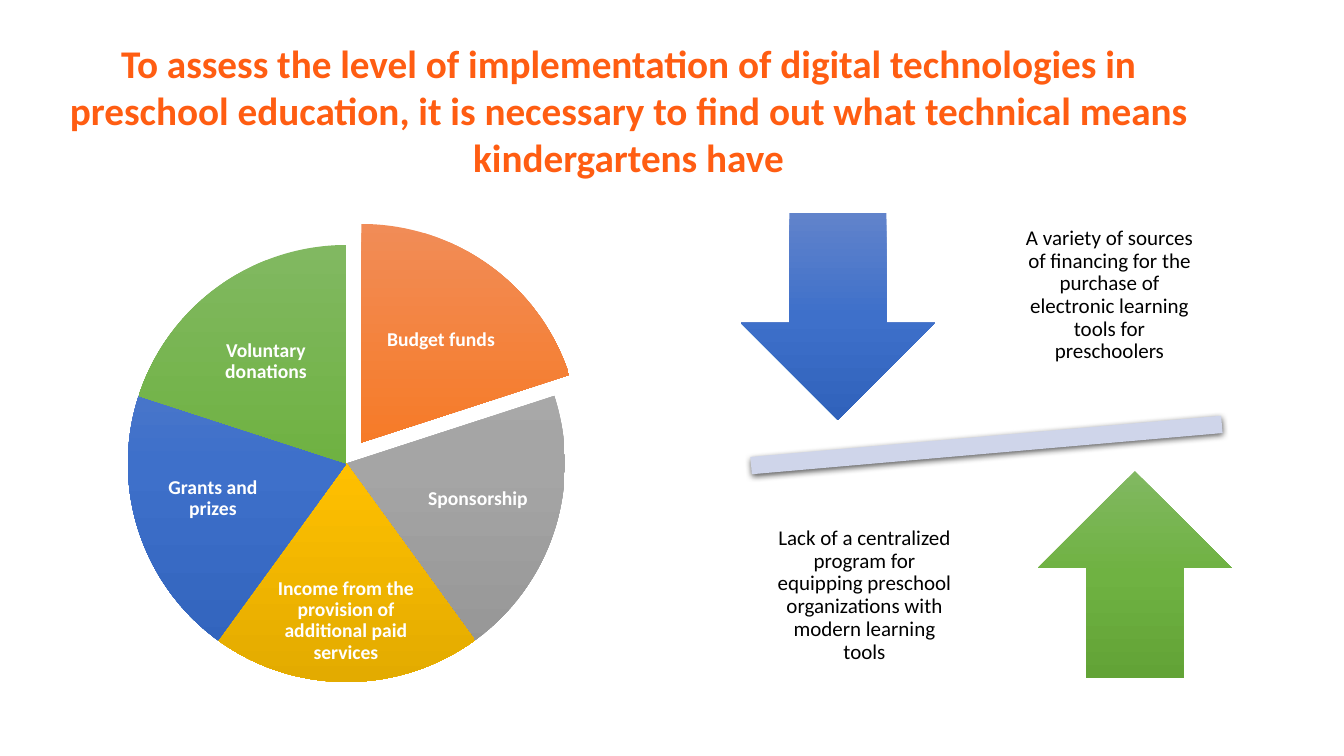
from copy import deepcopy
from typing import NamedTuple

from lxml import etree
from pptx import Presentation
from pptx.dml.color import RGBColor
from pptx.enum.shapes import MSO_SHAPE as Preset
from pptx.enum.text import MSO_ANCHOR as Anchor, MSO_AUTO_SIZE as AutoSize, PP_ALIGN as Align
from pptx.oxml.ns import qn
from pptx.shapes.autoshape import Shape
from pptx.slide import Slide
from pptx.util import Emu, Pt

SLIDE_W, SLIDE_H = 1344, 756
EMU_PER_PX = 12192000 / SLIDE_W
FONT = "Calibri"

COLORS = {"title": "FF5D12", "label": "FFFFFF", "statement": "000000",
          "beam": "CFD5EA", "shadow": "000000"}
GRADIENTS = {
    "orange": ("F18C57", "F67B28", "E56C19"),
    "gray": ("AFAFAF", "A5A5A5", "939393"),
    "gold": ("FFC64B", "FFC000", "E3AB00"),
    "blue": ("6183CB", "3E70CA", "3062BB"),
    "green": ("81B861", "6FB242", "62A336"),
}


class Box(NamedTuple):
    left: int
    top: int
    width: int
    height: int

    def emu(self) -> list[Emu]:
        return [px(length) for length in self]


class Source(NamedTuple):
    label: str
    gradient: str
    label_box: Box
    pie_box: Box


class Argument(NamedTuple):
    statement: str
    gradient: str
    arrow: Preset
    arrow_box: Box
    statement_box: Box


PIE = Box(128, 245, 437, 437)
PULLED_OUT = Box(143, 224, 437, 437)
SOURCES = [
    Source("Budget funds", "orange", Box(367, 289, 148, 102), PULLED_OUT),
    Source("Sponsorship", "gray", Box(413, 444, 130, 110), PIE),
    Source("Income from the provision of additional paid services", "gold",
           Box(268, 574, 156, 94), PIE),
    Source("Grants and prizes", "blue", Box(148, 444, 130, 110), PIE),
    Source("Voluntary donations", "green", Box(192, 311, 148, 102), PIE),
]
ARGUMENTS = [
    Argument("A variety of sources of financing for the purchase of electronic "
             "learning tools for preschoolers", "blue", Preset.DOWN_ARROW,
             Box(741, 213, 194, 207), Box(1006, 187, 207, 217)),
    Argument("Lack of a centralized program for equipping preschool organizations "
             "with modern learning tools", "green", Preset.UP_ARROW,
             Box(1038, 471, 194, 207), Box(761, 487, 207, 217)),
]


def px(length: int) -> Emu:
    return Emu(round(length * EMU_PER_PX))


def add_plain_shape(slide: Slide, preset: Preset, box: Box) -> Shape:
    shape = slide.shapes.add_shape(preset, *box.emu())
    shape.shadow.inherit = False
    shape.line.fill.background()
    return shape


def fill_gradient(shape: Shape, gradient: str) -> None:
    """Three stops running from top to bottom."""
    shape.fill.gradient()
    shape.fill.gradient_angle = 270
    stop_list = shape.element.spPr.find(".//" + qn("a:gsLst"))
    stop_list.append(deepcopy(stop_list[0]))
    for index, (stop, color) in enumerate(zip(shape.fill.gradient_stops, GRADIENTS[gradient])):
        stop.position = index / 2
        stop.color.rgb = RGBColor.from_string(color)


def add_shadow(shape: Shape) -> None:
    effects = shape.element.spPr.find(qn("a:effectLst"))
    shadow = etree.SubElement(effects, qn("a:outerShdw"), blurRad=str(Pt(4.5)),
                              dist=str(Pt(1.5)), dir="5400000", algn="ctr", rotWithShape="0")
    color = etree.SubElement(shadow, qn("a:srgbClr"), val=COLORS["shadow"])
    etree.SubElement(color, qn("a:alpha"), val="63000")


def write_text(shape: Shape, text: str, size: int, color: str, bold: bool) -> None:
    shape.text_frame.word_wrap = True
    paragraph = shape.text_frame.paragraphs[0]
    paragraph.text = text
    paragraph.alignment = Align.CENTER
    paragraph.font.name = FONT
    paragraph.font.size = Pt(size)
    paragraph.font.bold = bold
    paragraph.font.color.rgb = RGBColor.from_string(COLORS[color])


def add_caption(slide: Slide, box: Box, inset: int, text: str, size: int,
                color: str, bold: bool) -> None:
    caption = slide.shapes.add_textbox(*box.emu())
    frame = caption.text_frame
    frame.margin_left = frame.margin_right = px(inset)
    frame.margin_top = frame.margin_bottom = px(inset)
    frame.vertical_anchor = Anchor.MIDDLE
    write_text(caption, text, size, color, bold)
    frame.paragraphs[0].line_spacing = 0.9


def add_title(slide: Slide) -> None:
    title = slide.shapes.title
    title.left, title.top, title.width, title.height = Box(55, 34, 1147, 152).emu()
    title.text_frame.vertical_anchor = Anchor.TOP
    title.text_frame.auto_size = AutoSize.SHAPE_TO_FIT_TEXT
    write_text(title, "To assess the level of implementation of digital technologies in "
               "preschool education, it is necessary to find out what technical means "
               "kindergartens have", 28, "title", True)


def add_funding_pie(slide: Slide) -> None:
    sweep = 360 / len(SOURCES)
    for index, source in enumerate(SOURCES):
        start = 270 + sweep * index
        wedge = add_plain_shape(slide, Preset.PIE, source.pie_box)
        # Adjustments count 100000ths, angles 60000ths of a degree
        wedge.adjustments[0] = start % 360 * 0.6
        wedge.adjustments[1] = (start + sweep) % 360 * 0.6
        fill_gradient(wedge, source.gradient)
        add_caption(slide, source.label_box, 2, source.label, 14, "label", True)


def add_balance(slide: Slide) -> None:
    beam = add_plain_shape(slide, Preset.MATH_MINUS, Box(665, 408, 643, 74))
    beam.rotation = 355
    beam.fill.solid()
    beam.fill.fore_color.rgb = RGBColor.from_string(COLORS["beam"])
    add_shadow(beam)
    for argument in ARGUMENTS:
        arrow = add_plain_shape(slide, argument.arrow, argument.arrow_box)
        fill_gradient(arrow, argument.gradient)
        add_caption(slide, argument.statement_box, 12, argument.statement,
                    15, "statement", False)


def main() -> None:
    deck = Presentation()
    deck.slide_width, deck.slide_height = px(SLIDE_W), px(SLIDE_H)
    title_only = deck.slide_layouts[5]
    slide = deck.slides.add_slide(title_only)
    add_title(slide)
    add_funding_pie(slide)
    add_balance(slide)
    deck.save("out.pptx")


if __name__ == "__main__":
    main()
